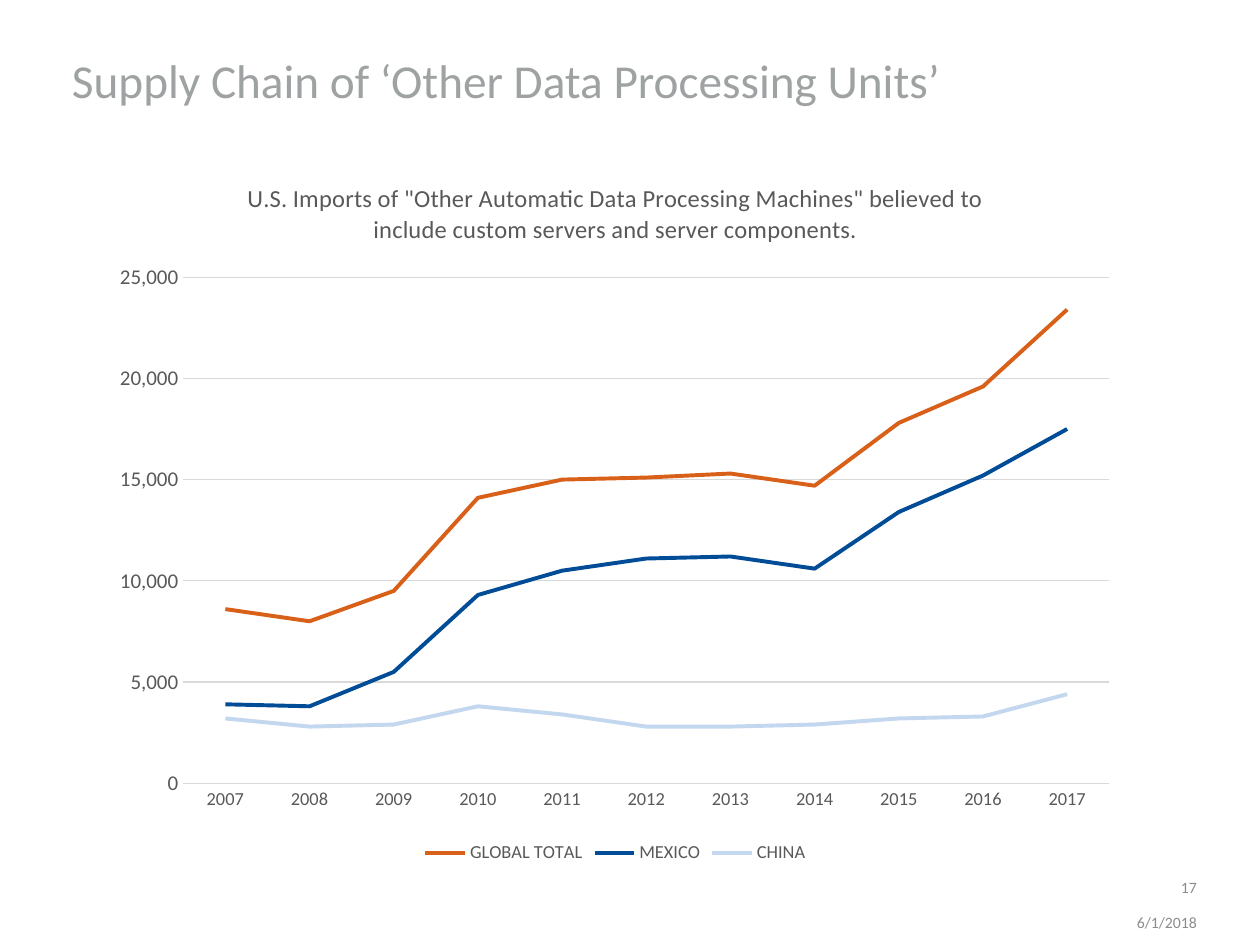
from lxml import etree
from pptx import Presentation
from pptx.chart.data import CategoryChartData
from pptx.dml.color import RGBColor
from pptx.enum.chart import XL_CHART_TYPE as ChartType, XL_LEGEND_POSITION as LegendPosition
from pptx.enum.chart import XL_TICK_MARK as TickMark
from pptx.enum.text import MSO_ANCHOR as Anchor, MSO_AUTO_SIZE as AutoSize, PP_ALIGN as Align
from pptx.oxml.ns import qn
from pptx.util import Emu, Pt

PX = 914400 / 126
FONT = "Calibri"
COLORS = {
    "title": "9EA2A2", "footer": "8C8C8C", "label": "595959", "grid": "D9D9D9",
    "global": "D86018", "mexico": "004C97", "china": "C3D7EE",
}
YEARS = [str(year) for year in range(2007, 2018)]
IMPORTS = [
    ("GLOBAL TOTAL", "global",
     [8600, 8000, 9500, 14100, 15000, 15100, 15300, 14700, 17800, 19600, 23400]),
    ("MEXICO", "mexico",
     [3900, 3800, 5500, 9300, 10500, 11100, 11200, 10600, 13400, 15200, 17500]),
    ("CHINA", "china",
     [3200, 2800, 2900, 3800, 3400, 2800, 2800, 2900, 3200, 3300, 4400]),
]


def px(length):
    """Turn a length in px into EMU."""
    return Emu(round(length * PX))


def rgb(name):
    """Look up a named colour."""
    return RGBColor.from_string(COLORS[name])


def style_font(font, size, color):
    """Set the face, size and colour of a font."""
    font.name, font.size, font.bold = FONT, Pt(size), False
    font.color.rgb = rgb(color)


def style_line(line, color, width):
    """Set the colour and width of a line."""
    line.color.rgb = rgb(color)
    line.width = Pt(width)


def write(shape, text, size, color, align=Align.LEFT, margins=(0, 0, 0, 0)):
    """Write one formatted paragraph, centred vertically, into a shape."""
    frame = shape.text_frame
    frame.word_wrap = True
    frame.auto_size = AutoSize.NONE
    frame.vertical_anchor = Anchor.MIDDLE
    frame.margin_left, frame.margin_top, frame.margin_right, frame.margin_bottom = map(px, margins)
    paragraph = frame.paragraphs[0]
    paragraph.alignment = align
    run = paragraph.add_run()
    run.text = text
    style_font(run.font, size, color)


def add_title(slide, left, top, width, height):
    """Place the slide title in its placeholder."""
    title = slide.shapes.title
    title.left, title.top, title.width, title.height = map(px, (left, top, width, height))
    write(title, "Supply Chain of ‘Other Data Processing Units’", 27, "title",
          margins=(13, 6, 13, 0))


def add_footer(slide, left, top, width, height):
    """Place the page number above the date, both against the right edge."""
    for text, offset, line_height in (("17", 0, 28), ("6/1/2018", 38, height - 38)):
        box = slide.shapes.add_textbox(px(left), px(top + offset), px(width), px(line_height))
        write(box, text, 9, "footer", Align.RIGHT)


def set_plot_area(chart, **fractions):
    """Fix the inner plot area as fractions of the chart."""
    plot_area = chart._chartSpace.chart.plotArea
    for old in plot_area.findall(qn("c:layout")):
        plot_area.remove(old)
    layout = etree.Element(qn("c:layout"))
    manual = etree.SubElement(layout, qn("c:manualLayout"))
    settings = {"layoutTarget": "inner", "xMode": "edge", "yMode": "edge", **fractions}
    for name, value in settings.items():
        etree.SubElement(manual, qn(f"c:{name}")).set("val", str(value))
    plot_area.insert(0, layout)


def add_imports_chart(slide, left, top, width, height):
    """Place the line chart of imports by source."""
    data = CategoryChartData(number_format="#,##0")
    data.categories = YEARS
    for name, _, values in IMPORTS:
        data.add_series(name, values)
    chart = slide.shapes.add_chart(
        ChartType.LINE, px(left), px(top), px(width), px(height), data).chart
    style_font(chart.font, 10, "label")

    paragraph = chart.chart_title.text_frame.paragraphs[0]
    run = paragraph.add_run()
    run.text = ('U.S. Imports of "Other Automatic Data Processing Machines" believed to '
                "include custom servers and server components.")
    style_font(run.font, 14, "label")
    chart.chart_title.include_in_layout = False

    chart.has_legend = True
    chart.legend.position = LegendPosition.BOTTOM
    chart.legend.include_in_layout = False
    style_font(chart.legend.font, 10.5, "label")

    for axis, size in ((chart.category_axis, 10.5), (chart.value_axis, 12)):
        axis.major_tick_mark = axis.minor_tick_mark = TickMark.NONE
        style_font(axis.tick_labels.font, size, "label")
    style_line(chart.category_axis.format.line, "grid", 0.75)
    value_axis = chart.value_axis
    value_axis.minimum_scale, value_axis.maximum_scale, value_axis.major_unit = 0, 25000, 5000
    value_axis.format.line.fill.background()
    value_axis.tick_labels.number_format = "#,##0"
    value_axis.tick_labels.number_format_is_linked = False
    style_line(value_axis.major_gridlines.format.line, "grid", 0.75)

    plot = chart.plots[0]
    plot.vary_by_categories = False
    for series, (_, color, _) in zip(plot.series, IMPORTS):
        series.smooth = False
        style_line(series.format.line, color, 2.25)
    set_plot_area(chart, x=0.08, y=0.17, w=0.9, h=0.71)


def main():
    """Build the slide and save it."""
    presentation = Presentation()
    presentation.slide_width, presentation.slide_height = px(1260), px(945)
    slide = presentation.slides.add_slide(presentation.slide_layouts[5])
    add_title(slide, 59, 14, 955, 126)
    add_footer(slide, 1061, 873, 136, 61)
    add_imports_chart(slide, 101, 156, 1029, 713)
    presentation.save("out.pptx")


if __name__ == "__main__":
    main()
